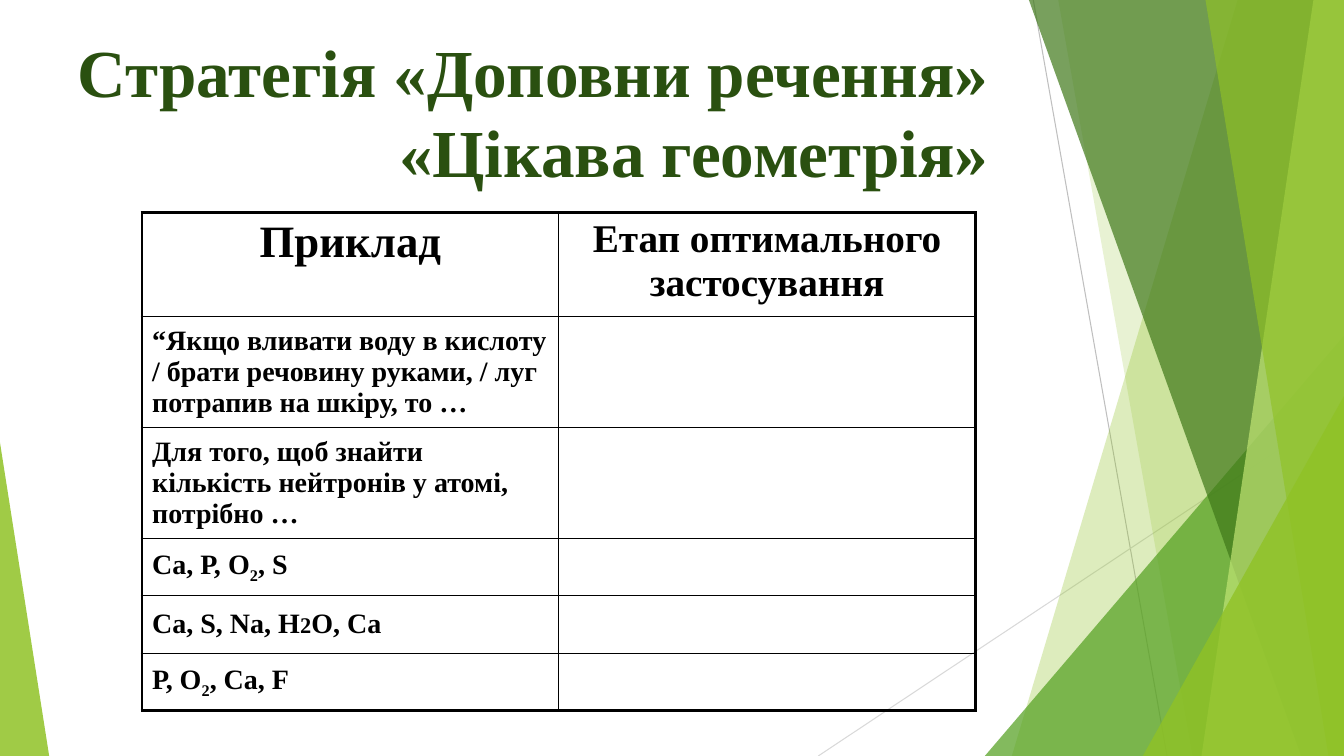
from dataclasses import dataclass

from lxml import etree
from pptx import Presentation
from pptx.dml.color import RGBColor
from pptx.enum import shapes, text
from pptx.oxml import ns
from pptx.util import Cm, Pt

WIDE, HIGH = 33.87, 19.05


@dataclass(frozen=True)
class Theme:
    font: str = "Times New Roman"
    ink: str = "000000"
    head: str = "2A5010"
    lime: str = "90C226"
    leaf: str = "54A021"
    moss: str = "3F7819"
    pale: str = "C0E474"
    title: float = 48
    pitch: float = 57.6
    body: float = 20
    small: float = 16
    thin: float = 1
    thick: float = 2.25


@dataclass(frozen=True)
class Ray:
    start: tuple[float, float]
    end: tuple[float, float]
    color: str


@dataclass(frozen=True)
class Band:
    """Four-sided area between a slanted edge and the right side of the slide."""
    top: float
    base: float
    color: str
    alpha: int


@dataclass(frozen=True)
class Wedge:
    left: float
    top: float
    width: float
    height: float
    peak: float
    color: str
    alpha: int


@dataclass(frozen=True)
class Part:
    text: str
    size: float
    sub: bool = False


@dataclass(frozen=True)
class Row:
    height: float
    cells: tuple[tuple[Part, ...], ...]
    head: bool = False


T = Theme()
RAYS = [
    Ray((26.04, 0), (29.41, HIGH), "BFBFBF"),
    Ray((WIDE, 10.24), (20.62, HIGH), "D9D9D9"),
]
DECOR = [
    Band(31.19, 25.5, T.lime, 30),
    Band(26.67, 30.05, T.lime, 20),
    Wedge(24.82, 8.46, 9.05, 10.59, 1, T.leaf, 72),
    Band(25.93, 32.79, T.moss, 70),
    Band(33.1, 30.28, T.pale, 70),
    Band(30.38, 33.48, T.lime, 65),
    Wedge(28.8, 9.98, 5.07, 9.07, 1, T.lime, 80),
    Wedge(0, 11.15, 1.24, 7.9, 0, T.lime, 85),
]
TITLE = "Стратегія «Доповни речення»\n«Цікава геометрія»"
SUB = Part("2", T.body, True)


def say(words: str) -> Part:
    return Part(words, T.body)


ROWS = [
    Row(2.62, ((Part("Приклад", 32),),
               (Part("Етап оптимального застосування", 28),)), True),
    Row(2.79, ((say("“Якщо вливати воду в кислоту / брати речовину руками, "
                    "/ луг потрапив на шкіру, то …"),), ())),
    Row(2.79, ((say("Для того, щоб знайти кількість нейтронів у атомі, "
                    "потрібно …"),), ())),
    Row(1.45, ((say("Сa, Р, O"), SUB, say(", S")), ())),
    Row(1.45, ((say("Ca, S, Na, H"), Part("2", T.small), say("O, Ca")), ())),
    Row(1.45, ((say("Р, O"), SUB, say(", Сa, F")), ())),
]


def style(run, size: float, color: str) -> None:
    font = run.font
    font.name, font.size, font.bold = T.font, Pt(size), True
    font.color.rgb = RGBColor.from_string(color)


def paint(shape, color: str, alpha: int) -> None:
    shape.shadow.inherit = False
    shape.line.fill.background()
    shape.fill.solid()
    shape.fill.fore_color.rgb = RGBColor.from_string(color)
    tint = shape.fill._xPr.find(".//" + ns.qn("a:srgbClr"))
    etree.SubElement(tint, ns.qn("a:alpha")).set("val", str(alpha * 1000))


def draw_ray(slide, ray: Ray) -> None:
    line = slide.shapes.add_connector(
        shapes.MSO_CONNECTOR.STRAIGHT, *map(Cm, ray.start + ray.end))
    line.line.color.rgb = RGBColor.from_string(ray.color)
    line.line.width = Pt(0.75)
    etree.SubElement(line._element.spPr, ns.qn("a:effectLst"))


def draw_band(slide, band: Band) -> None:
    form = slide.shapes.build_freeform(Cm(band.top), 0)
    edge = [(WIDE, 0), (WIDE, HIGH), (band.base, HIGH)]
    form.add_line_segments([(Cm(x), Cm(y)) for x, y in edge], close=True)
    paint(form.convert_to_shape(), band.color, band.alpha)


def draw_wedge(slide, wedge: Wedge) -> None:
    shape = slide.shapes.add_shape(
        shapes.MSO_SHAPE.ISOSCELES_TRIANGLE, Cm(wedge.left), Cm(wedge.top),
        Cm(wedge.width), Cm(wedge.height))
    shape.adjustments[0] = wedge.peak
    paint(shape, wedge.color, wedge.alpha)


def draw_title(slide) -> None:
    title = slide.shapes.title
    title.left, title.top = Cm(1.75), Cm(0.58)
    title.width, title.height = Cm(23.93), Cm(4.37)
    frame = title.text_frame
    frame.text = TITLE
    frame.word_wrap = True
    frame.auto_size = text.MSO_AUTO_SIZE.NONE
    frame.vertical_anchor = text.MSO_ANCHOR.BOTTOM
    frame.margin_left, frame.margin_right = 0, Cm(0.76)
    for para in frame.paragraphs:
        para.alignment = text.PP_ALIGN.RIGHT
        para.line_spacing = Pt(T.pitch)
        para.space_before = Pt(0)
        style(para.runs[0], T.title, T.head)


def add_border(cell, side: str, width: float) -> None:
    line = etree.SubElement(cell._tc.get_or_add_tcPr(), ns.qn(f"a:ln{side}"))
    line.set("w", str(Pt(width)))
    fill = etree.SubElement(line, ns.qn("a:solidFill"))
    etree.SubElement(fill, ns.qn("a:srgbClr")).set("val", T.ink)


def fill_cell(cell, parts: tuple[Part, ...], head: bool) -> None:
    cell.vertical_anchor = text.MSO_ANCHOR.TOP if head else text.MSO_ANCHOR.MIDDLE
    para = cell.text_frame.paragraphs[0]
    para.alignment = text.PP_ALIGN.CENTER if head else text.PP_ALIGN.LEFT
    for part in parts:
        run = para.add_run()
        run.text = part.text
        style(run, part.size, T.ink)
        if part.sub:
            run._r.get_or_add_rPr().set("baseline", "-25000")


def draw_table(slide) -> None:
    cols = len(ROWS[0].cells)
    table = slide.shapes.add_table(
        len(ROWS), cols, Cm(3.58), Cm(5.36), Cm(21),
        Cm(sum(row.height for row in ROWS))).table
    table.first_row = table.horz_banding = False
    for r, row in enumerate(ROWS):
        table.rows[r].height = Cm(row.height)
        for c, parts in enumerate(row.cells):
            cell = table.cell(r, c)
            fill_cell(cell, parts, row.head)
            outer = {"L": c == 0, "R": c == cols - 1,
                     "T": r == 0, "B": r == len(ROWS) - 1}
            for side, edge in outer.items():
                add_border(cell, side, T.thick if edge else T.thin)
            cell.fill.background()


def main() -> None:
    deck = Presentation()
    deck.slide_width, deck.slide_height = Cm(WIDE), Cm(HIGH)
    slide = deck.slides.add_slide(deck.slide_layouts[5])
    for ray in RAYS:
        draw_ray(slide, ray)
    for item in DECOR:
        if isinstance(item, Band):
            draw_band(slide, item)
        else:
            draw_wedge(slide, item)
    draw_title(slide)
    draw_table(slide)
    deck.save("out.pptx")


if __name__ == "__main__":
    main()
